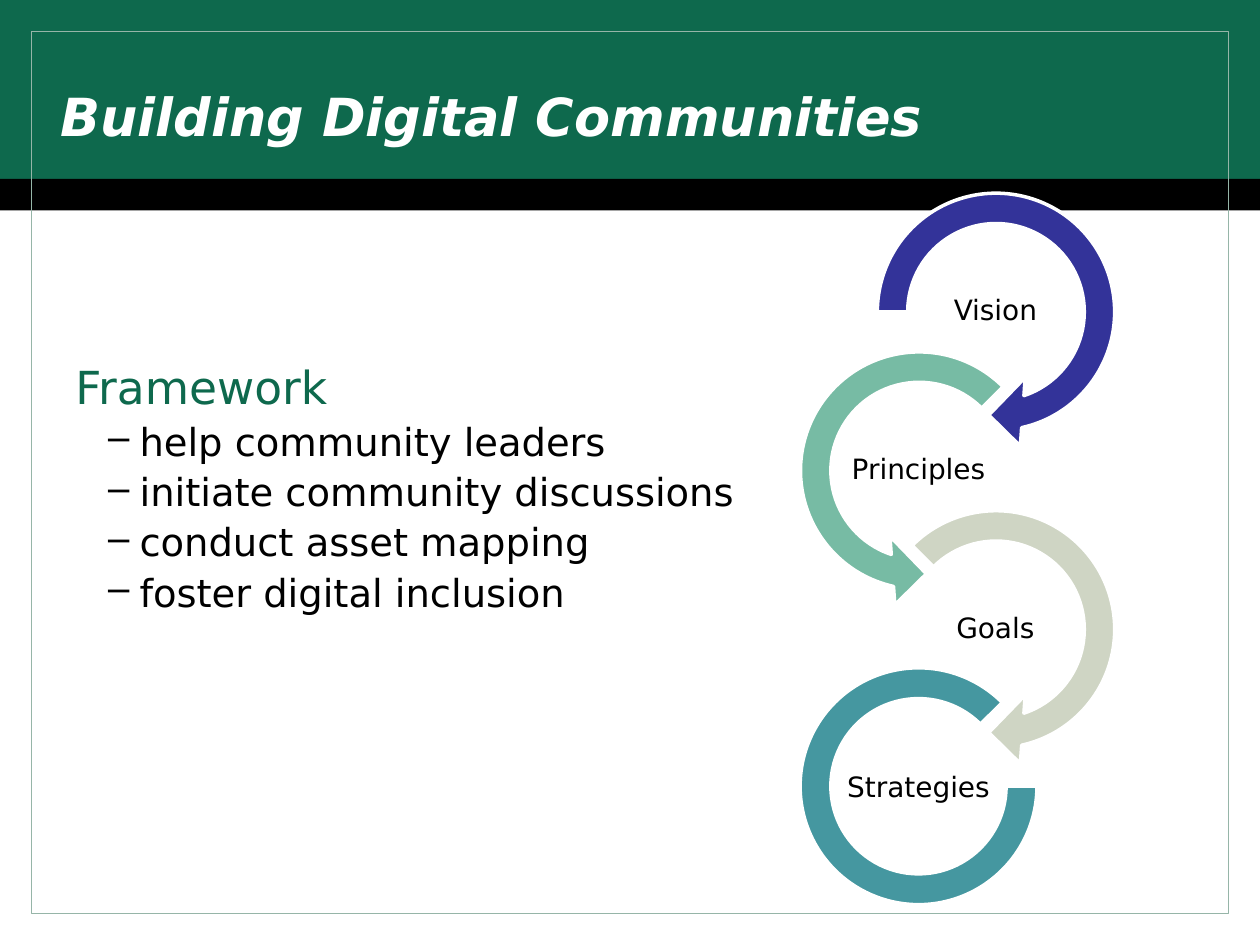
from lxml import etree
from pptx import Presentation
from pptx import util as u
from pptx.dml.color import RGBColor
from pptx.enum import shapes, text
from pptx.oxml.ns import qn

FONT = "DejaVu Sans"
COLS, ROWS = 40, 30
HEX = {"green": "0E694D", "black": "000000", "white": "FFFFFF", "frame": "96B5A8",
       "indigo": "333399", "mint": "77BBA4", "sand": "CFD5C4", "teal": "4597A0"}
KIND = shapes.MSO_SHAPE


class Deck:
    """Style and current slide; boxes are (column, row, columns, rows)."""

    def __init__(self):
        self.prs = Presentation()
        self.prs.slide_width, self.prs.slide_height = u.Inches(10), u.Inches(7.5)
        self.slide = self.prs.slides.add_slide(self.prs.slide_layouts[5])

    def cells(self, box):
        wide, high = self.prs.slide_width / COLS, self.prs.slide_height / ROWS
        return [round(n * size) for n, size in zip(box, (wide, high, wide, high))]

    def color(self, name):
        return RGBColor.from_string(HEX[name])

    def style(self, para, size, color, bold=None):
        for run in para.runs:
            font = run.font
            font.name, font.size = FONT, u.Pt(size)
            font.bold = font.italic = bold
            font.color.rgb = self.color(color)

    def shape(self, kind, box, fill=None, line=None, width=0.75, adj=()):
        item = self.slide.shapes.add_shape(kind, *self.cells(box))
        item.shadow.inherit = False
        for part, color in ((item.fill, fill), (item.line.fill, line)):
            if color:
                part.solid()
                part.fore_color.rgb = self.color(color)
            else:
                part.background()
        if line:
            item.line.width = u.Pt(width)
        for i, value in enumerate(adj):
            item.adjustments[i] = value

    def title(self, words, box):
        item = self.slide.shapes.title
        item.left, item.top, item.width, item.height = self.cells(box)
        item.element.getparent().append(item.element)  # in front of the bands
        frame = item.text_frame
        frame.text = words
        frame.vertical_anchor = text.MSO_ANCHOR.MIDDLE
        frame.paragraphs[0].alignment = text.PP_ALIGN.LEFT
        self.style(frame.paragraphs[0], 30, "white", True)

    def frame(self, box):
        frame = self.slide.shapes.add_textbox(*self.cells(box)).text_frame
        frame.word_wrap = True
        return frame

    def label(self, words, box):
        frame = self.frame(box)
        frame.margin_left = frame.margin_right = u.Inches(0.01)
        frame.margin_top = frame.margin_bottom = u.Inches(0.01)
        frame.vertical_anchor = text.MSO_ANCHOR.MIDDLE
        para = frame.paragraphs[0]
        para.text = words
        para.alignment = text.PP_ALIGN.CENTER
        para.line_spacing = 0.9
        self.style(para, 16, "black")

    def outline(self, head, items, box):
        frame = self.frame(box)
        first = frame.paragraphs[0]
        first.text = head
        first.line_spacing = 0.9
        self.style(first, 26, "green")
        for item in items:
            para = frame.add_paragraph()
            para.text = item
            para.level = 1
            para.line_spacing, para.space_before = 0.9, u.Pt(5)
            props = para._p.get_or_add_pPr()
            props.set("marL", str(u.Inches(0.51)))
            props.set("indent", str(u.Inches(-0.25)))
            etree.SubElement(props, qn("a:buChar")).set("char", "–")
            self.style(para, 22, "black")


def main():
    deck = Deck()
    deck.shape(KIND.RECTANGLE, (0, 0, COLS, 5.68), "green")
    deck.shape(KIND.RECTANGLE, (0, 5.68, COLS, 1), "black")
    deck.shape(KIND.RECTANGLE, (1, 1, COLS - 2, ROWS - 2), line="frame")
    deck.title("Building Digital Communities", (1.52, 1.52, 38.16, 4.32))

    right, left = KIND.CIRCULAR_ARROW, KIND.LEFT_CIRCULAR_ARROW
    steps = [("Vision", "indigo", right, (45, 108)),
             ("Principles", "mint", left, (63, 189)),
             ("Goals", "sand", right, (45, 135)),
             ("Strategies", "teal", KIND.BLOCK_ARC, (0, 189))]
    for i, (name, color, kind, turn) in enumerate(steps):
        x, y = (27.24, 24.8)[i % 2], 5.52 + 5.04 * i
        if kind == KIND.BLOCK_ARC:
            box, adj = (x + 0.6, y + 0.56, 7.52, 7.52), (*turn, 0.13)
        else:
            box, adj = (x, y, 8.76, 8.76), (0.11, 11.42, *turn, 0.125)
        deck.shape(kind, box, color, "white", 2, adj)
        deck.label(name, (x + 1.92, y + 3.16, 4.88, 2.44))

    deck.outline("Framework",
                 ["help community leaders", "initiate community discussions",
                  "conduct asset mapping", "foster digital inclusion"],
                 (2, 11.4, 22, 9.52))
    deck.prs.save("out.pptx")


if __name__ == "__main__":
    main()
